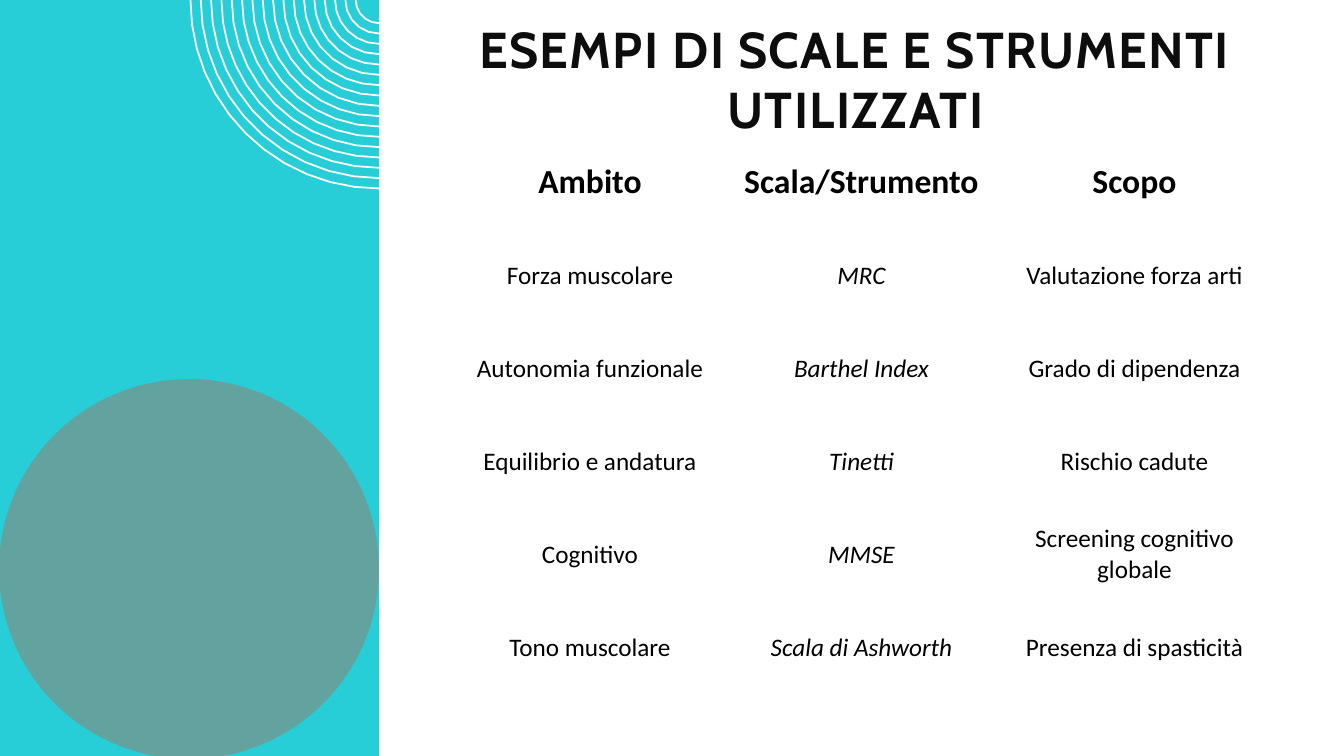
import math
from dataclasses import dataclass

import pptx
import pptx.dml.color
import pptx.enum.shapes
import pptx.enum.text
import pptx.util

PX = 914400 / 100.8
MIDDLE = pptx.enum.text.MSO_ANCHOR.MIDDLE
CENTER = pptx.enum.text.PP_ALIGN.CENTER


@dataclass(frozen=True)
class Theme:
    panel: str = "27CED7"
    disc: str = "62A39F"
    rings: str = "FFFFFF"
    title: str = "0D0D0D"
    text: str = "000000"
    title_font: str = "Cabin"
    body_font: str = "Calibri"
    title_pt: int = 36
    head_pt: int = 24
    body_pt: int = 18


THEME = Theme()
TITLE = "ESEMPI DI SCALE E STRUMENTI UTILIZZATI"
COL_WIDTHS = (270, 273, 273)
ROW_HEIGHT = 93
ROWS = (
    ("Ambito", "Scala/Strumento", "Scopo"),
    ("Forza muscolare", "MRC", "Valutazione forza arti"),
    ("Autonomia funzionale", "Barthel Index", "Grado di dipendenza"),
    ("Equilibrio e andatura", "Tinetti", "Rischio cadute"),
    ("Cognitivo", "MMSE", "Screening cognitivo globale"),
    ("Tono muscolare", "Scala di Ashworth", "Presenza di spasticità"),
)


def px(n):
    return pptx.util.Emu(round(n * PX))


def rgb(color):
    return pptx.dml.color.RGBColor.from_string(color)


def style(p, name, size, color, bold=False, italic=False):
    p.alignment = CENTER
    for r in p.runs:
        r.font.name = name
        r.font.size = pptx.util.Pt(size)
        r.font.color.rgb = rgb(color)
        r.font.bold = bold
        r.font.italic = italic


def add_shape(s, kind, box, color):
    sp = s.shapes.add_shape(kind, *map(px, box))
    sp.shadow.inherit = False
    sp.fill.solid()
    sp.fill.fore_color.rgb = rgb(color)
    sp.line.fill.background()


def quarter_arc(cx, r):
    """Points from the left of (cx, 0) to below it; larger arcs get more."""
    n = 4 + round(r / 24)
    angles = [math.pi / 2 * i / n for i in range(n + 1)]
    return [(px(cx - r * math.cos(a)), px(r * math.sin(a))) for a in angles]


def add_rings(s, cx, radius, step, count, color):
    """Draw concentric quarter rings as the open contours of one outline."""
    arcs = [quarter_arc(cx, radius - i * step) for i in range(count)]
    builder = s.shapes.build_freeform(*arcs[0][0])
    builder.add_line_segments(arcs[0][1:], close=False)
    for start, *points in arcs[1:]:
        builder.move_to(*start)
        builder.add_line_segments(points, close=False)
    sp = builder.convert_to_shape()
    sp.shadow.inherit = False
    sp.fill.background()
    sp.line.color.rgb = rgb(color)
    sp.line.width = pptx.util.Pt(1.25)


def set_title(s, text, box):
    sp = s.shapes.title
    sp.left, sp.top, sp.width, sp.height = map(px, box)
    tf = sp.text_frame
    tf.text = text
    tf.word_wrap = True
    tf.auto_size = pptx.enum.text.MSO_AUTO_SIZE.NONE
    tf.vertical_anchor = MIDDLE
    tf.margin_top = tf.margin_bottom = 0
    p = tf.paragraphs[0]
    style(p, THEME.title_font, THEME.title_pt, THEME.title, bold=True)
    p.runs[0].font._element.set("spc", "100")


def add_scales_table(s, left, top):
    box = (left, top, sum(COL_WIDTHS), ROW_HEIGHT * len(ROWS))
    table = s.shapes.add_table(len(ROWS), len(COL_WIDTHS), *map(px, box)).table
    table.horz_banding = table.first_row = False
    for column, width in zip(table.columns, COL_WIDTHS):
        column.width = px(width)
    for i, row in enumerate(ROWS):
        table.rows[i].height = px(ROW_HEIGHT)
        for j, text in enumerate(row):
            cell = table.cell(i, j)
            cell.text = text
            cell.fill.background()
            cell.vertical_anchor = MIDDLE
            cell.margin_left = cell.margin_right = px(7)
            cell.margin_top = cell.margin_bottom = px(4)
            head = i == 0
            style(cell.text_frame.paragraphs[0], THEME.body_font,
                  THEME.head_pt if head else THEME.body_pt, THEME.text,
                  bold=head, italic=j == 1 and not head)


def main():
    prs = pptx.Presentation()
    prs.slide_width, prs.slide_height = px(1344), px(756)
    s = prs.slides.add_slide(prs.slide_layouts[5])
    shape = pptx.enum.shapes.MSO_SHAPE
    add_shape(s, shape.RECTANGLE, (0, 0, 379, 756), THEME.panel)
    add_rings(s, cx=379, radius=188.5, step=10.33, count=17,
              color=THEME.rings)
    add_shape(s, shape.OVAL, (-1, 379, 380, 380), THEME.disc)
    set_title(s, TITLE, (441, 35, 829, 87))
    add_scales_table(s, 455, 136)
    prs.save("out.pptx")


if __name__ == "__main__":
    main()
